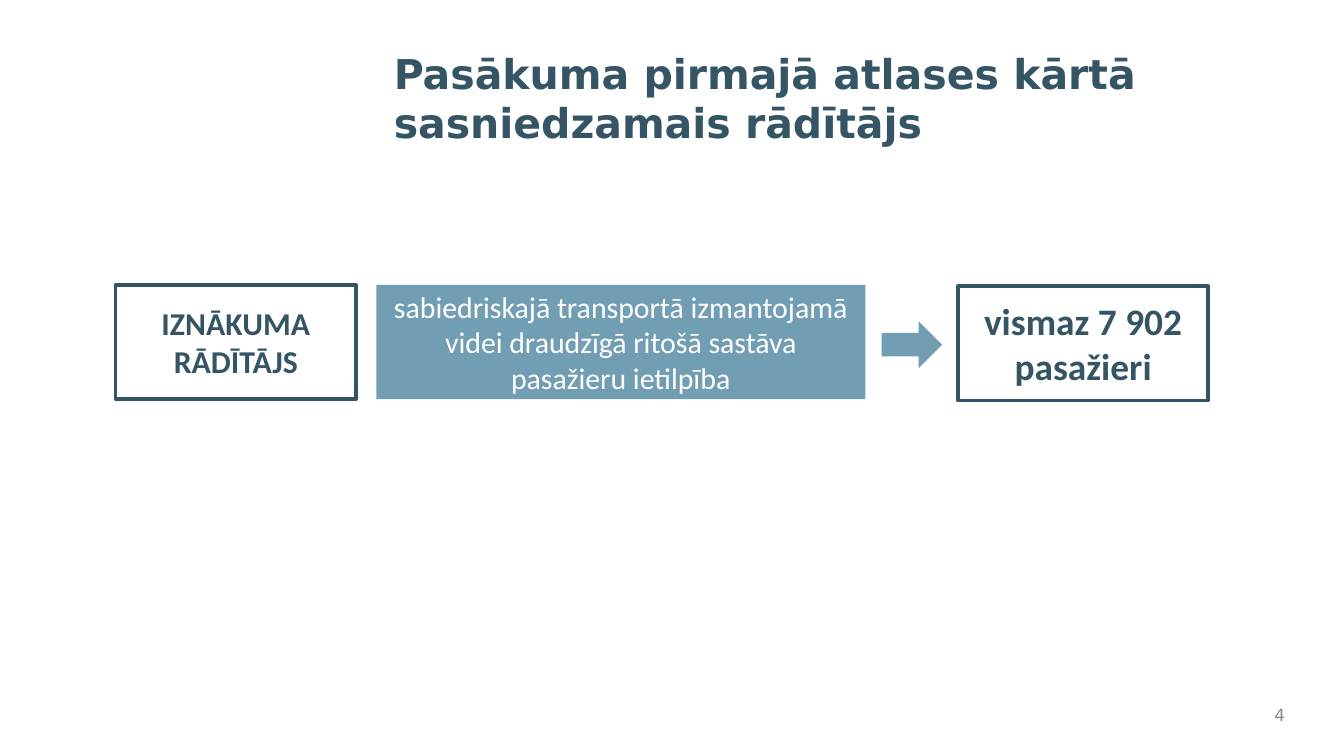
from pptx import Presentation
from pptx.dml.color import RGBColor
from pptx.enum.shapes import MSO_SHAPE
from pptx.enum.text import MSO_ANCHOR, PP_ALIGN
from pptx.util import Inches, Pt

DARK, BLUE, WHITE, GREY = "355464", "729EB4", "FFFFFF", "898989"


def color(hex_text):
    return RGBColor.from_string(hex_text)


def write(shape, lines, size, ink, font="Calibri", bold=False,
          align=PP_ALIGN.CENTER, anchor=MSO_ANCHOR.MIDDLE):
    tf = shape.text_frame
    tf.word_wrap = True
    tf.vertical_anchor = anchor
    for i, line in enumerate(lines):
        p = tf.paragraphs[0] if i == 0 else tf.add_paragraph()
        p.alignment = align
        r = p.add_run()
        r.text = line
        r.font.name, r.font.size, r.font.bold = font, Pt(size), bold
        r.font.color.rgb = color(ink)


def add_block(s, kind, x, y, w, h, fill, line=None):
    sp = s.shapes.add_shape(kind, Inches(x), Inches(y), Inches(w), Inches(h))
    sp.shadow.inherit = False
    sp.fill.solid()
    sp.fill.fore_color.rgb = color(fill)
    if line:
        sp.line.color.rgb = color(line)
        sp.line.width = Pt(2)
    else:
        sp.line.fill.background()
    return sp


def add_title(s, x, y, w, h):
    sp = s.shapes.title
    sp.left, sp.top, sp.width, sp.height = map(Inches, (x, y, w, h))
    write(sp, ["Pasākuma pirmajā atlases kārtā sasniedzamais rādītājs"], 22, DARK,
          "DejaVu Sans", True, PP_ALIGN.LEFT, MSO_ANCHOR.TOP)


def add_indicator_row(s, x, y, h):
    """Label, description, arrow and target value, from left to right."""
    rect = MSO_SHAPE.RECTANGLE
    # Label
    label = add_block(s, rect, x, y, 1.79, h, WHITE, DARK)
    write(label, ["IZNĀKUMA", "RĀDĪTĀJS"], 17, DARK, bold=True)
    # Description
    description = add_block(s, rect, x + 1.94, y, 3.64, h, BLUE)
    write(description, ["sabiedriskajā transportā izmantojamā videi draudzīgā "
                        "ritošā sastāva pasažieru ietilpība"], 16, WHITE)
    # Arrow
    add_block(s, MSO_SHAPE.RIGHT_ARROW, x + 5.7, y + 0.27, 0.45, 0.35, BLUE)
    # Target value
    target = add_block(s, rect, x + 6.27, y + 0.01, 1.86, h, WHITE, DARK)
    write(target, ["vismaz 7 902 pasažieri"], 20, DARK, bold=True)


def add_page_number(s, x, y, w, h):
    sp = s.shapes.add_textbox(Inches(x), Inches(y), Inches(w), Inches(h))
    write(sp, ["4"], 9, GREY, "DejaVu Sans", align=PP_ALIGN.RIGHT)


def main():
    prs = Presentation()
    # Widescreen 16:9
    prs.slide_width, prs.slide_height = Inches(10), Inches(10 * 9 / 16)
    s = prs.slides.add_slide(prs.slide_layouts[5])
    add_title(s, 2.83, 0.31, 6.67, 1.3)
    add_indicator_row(s, 0.86, 2.12, 0.85)
    add_page_number(s, 9.33, 5.19, 0.33, 0.25)
    prs.save("out.pptx")


if __name__ == "__main__":
    main()
